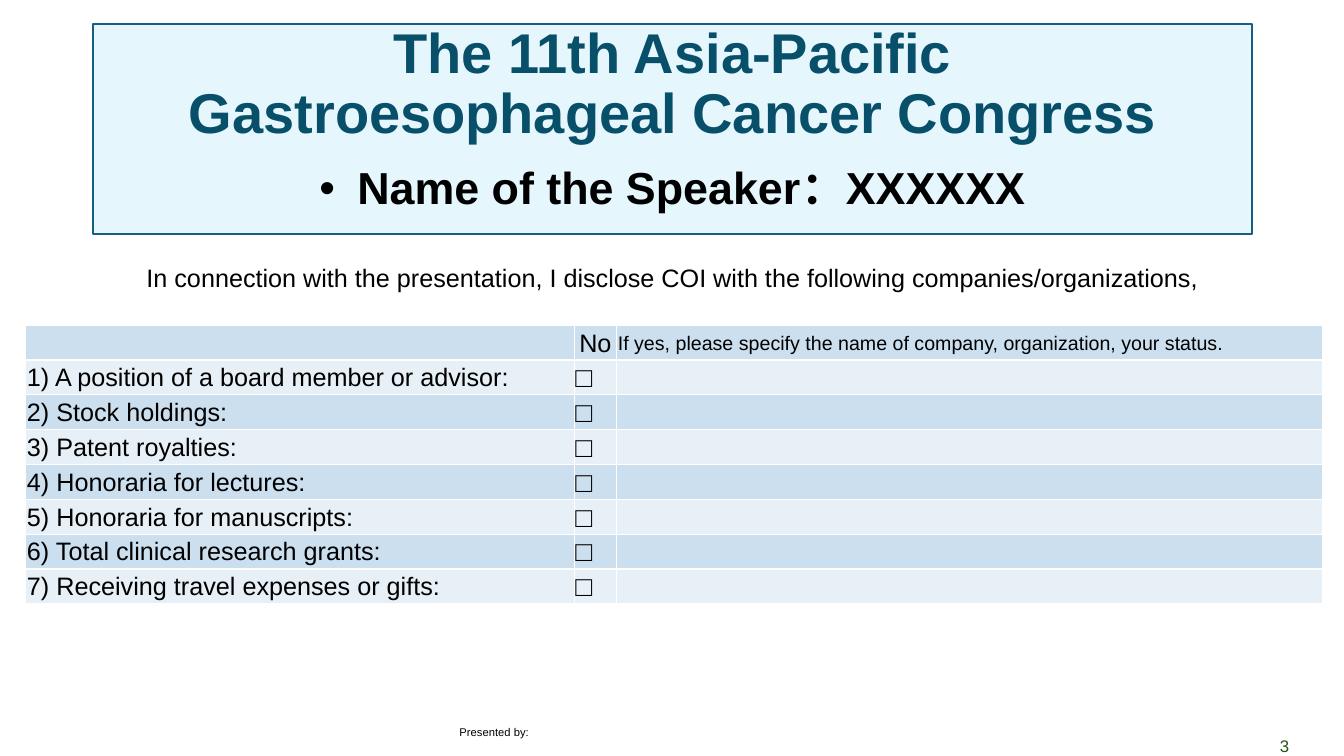
from lxml import etree
from pptx import Presentation
from pptx import util as u
from pptx.dml import color
from pptx.enum import shapes, text
from pptx.oxml import ns

FONT = "Arial"
COLORS = {
    "black": "000000",
    "title": "084F6A",
    "panel": "CAEEFB",
    "outline": "156082",
    "number": "275417",
    "band_dark": "CCDFEF",
    "band_light": "E7F0F7",
}
INTERESTS = [
    "A position of a board member or advisor:",
    "Stock holdings:",
    "Patent royalties:",
    "Honoraria for lectures:",
    "Honoraria for manuscripts:",
    "Total clinical research grants:",
    "Receiving travel expenses or gifts:",
]
HEADER = ["", "No", "If yes, please specify the name of company, organization, your status."]


def rgb(name):
    return color.RGBColor.from_string(COLORS[name])


def place(shape, left, top, width, height):
    shape.left, shape.top = u.Cm(left), u.Cm(top)
    shape.width, shape.height = u.Cm(width), u.Cm(height)


def write(frame, words, size, fill="black", bold=False, align=text.PP_ALIGN.LEFT, spacing=1.0):
    frame.text = words
    paragraph = frame.paragraphs[0]
    paragraph.alignment = align
    paragraph.line_spacing = spacing
    paragraph.space_before = u.Pt(0)
    for font in [paragraph.font] + [run.font for run in paragraph.runs]:
        font.name = FONT
        font.size = u.Pt(size)
        font.bold = bold
        font.color.rgb = rgb(fill)


def remove_bullet(paragraph):
    properties = paragraph._p.get_or_add_pPr()
    properties.set("marL", "0")
    properties.set("indent", "0")
    etree.SubElement(properties, ns.qn("a:buNone"))


def add_heading(slide, left, top, width, height):
    title, body = slide.shapes.title, slide.placeholders[1]
    panel = slide.shapes.add_shape(
        shapes.MSO_SHAPE.RECTANGLE, u.Cm(left), u.Cm(top), u.Cm(width), u.Cm(height))
    panel.shadow.inherit = False
    panel.fill.solid()
    panel.fill.fore_color.rgb = rgb("panel")
    panel_color = panel.element.spPr.find(".//" + ns.qn("a:srgbClr"))
    etree.SubElement(panel_color, ns.qn("a:alpha")).set("val", "48000")
    panel.line.color.rgb = rgb("outline")
    panel.line.width = u.Pt(1.5)
    title.element.addprevious(panel.element)

    place(title, left, top, width, 3.07)
    title.text_frame.auto_size = text.MSO_AUTO_SIZE.NONE
    title.text_frame.vertical_anchor = text.MSO_ANCHOR.MIDDLE
    write(title.text_frame, "The 11th Asia-Pacific\vGastroesophageal Cancer Congress",
          40, "title", True, text.PP_ALIGN.CENTER, 0.9)

    place(body, left, top + 3.45, width, height - 3.45)
    body.text_frame.auto_size = text.MSO_AUTO_SIZE.NONE
    body.text_frame.vertical_anchor = text.MSO_ANCHOR.TOP
    remove_bullet(body.text_frame.paragraphs[0])
    write(body.text_frame, "Name of the Speaker：XXXXXX",
          32, bold=True, align=text.PP_ALIGN.CENTER, spacing=0.9)


def add_label(slide, left, top, width, height, words, size, wrap=True,
              anchor=text.MSO_ANCHOR.TOP, **style):
    box = slide.shapes.add_textbox(u.Cm(left), u.Cm(top), u.Cm(width), u.Cm(height))
    box.text_frame.word_wrap = wrap
    box.text_frame.vertical_anchor = anchor
    write(box.text_frame, words, size, **style)


def add_disclosures(slide, left, top, widths, row_height):
    rows = [HEADER] + [[f"{number}) {interest}", "□", ""]
                       for number, interest in enumerate(INTERESTS, 1)]
    table = slide.shapes.add_table(
        len(rows), len(widths), u.Cm(left), u.Cm(top),
        u.Cm(sum(widths)), u.Cm(row_height * len(rows))).table
    table.first_row = False
    table.horz_banding = False
    for column, width in zip(table.columns, widths):
        column.width = u.Cm(width)
    for row_index, row in enumerate(rows):
        table.rows[row_index].height = u.Cm(row_height)
        sizes = [18, 20, 18] if row_index else [18, 18, 14]
        for column_index, words in enumerate(row):
            cell = table.cell(row_index, column_index)
            cell.fill.solid()
            cell.fill.fore_color.rgb = rgb("band_light" if row_index % 2 else "band_dark")
            cell.margin_left = cell.margin_right = cell.margin_top = u.Cm(0.03)
            cell.margin_bottom = 0
            cell.vertical_anchor = text.MSO_ANCHOR.MIDDLE
            align = text.PP_ALIGN.CENTER if words == "No" else text.PP_ALIGN.LEFT
            write(cell.text_frame, words, sizes[column_index], align=align)


def main():
    presentation = Presentation()
    presentation.slide_width, presentation.slide_height = u.Cm(33.87), u.Cm(19.05)
    slide = presentation.slides.add_slide(presentation.slide_layouts[1])
    left, width = 2.34, 29.21
    add_heading(slide, left, 0.61, width, 5.28)
    add_label(slide, left, 6.27, width, 1.14,
              "In connection with the presentation, I disclose COI with the following "
              "companies/organizations,", 18, align=text.PP_ALIGN.CENTER, spacing=1.3)
    add_disclosures(slide, 0.65, 8.2, [13.82, 1.07, 17.78], 0.87)
    add_label(slide, 11.33, 18.16, 2.29, 0.61, "Presented by:", 8, wrap=False)
    add_label(slide, 29.54, 18.54, 3.2, 0.51, "3", 12, anchor=text.MSO_ANCHOR.MIDDLE,
              fill="number", align=text.PP_ALIGN.RIGHT)
    presentation.save("out.pptx")


if __name__ == "__main__":
    main()
